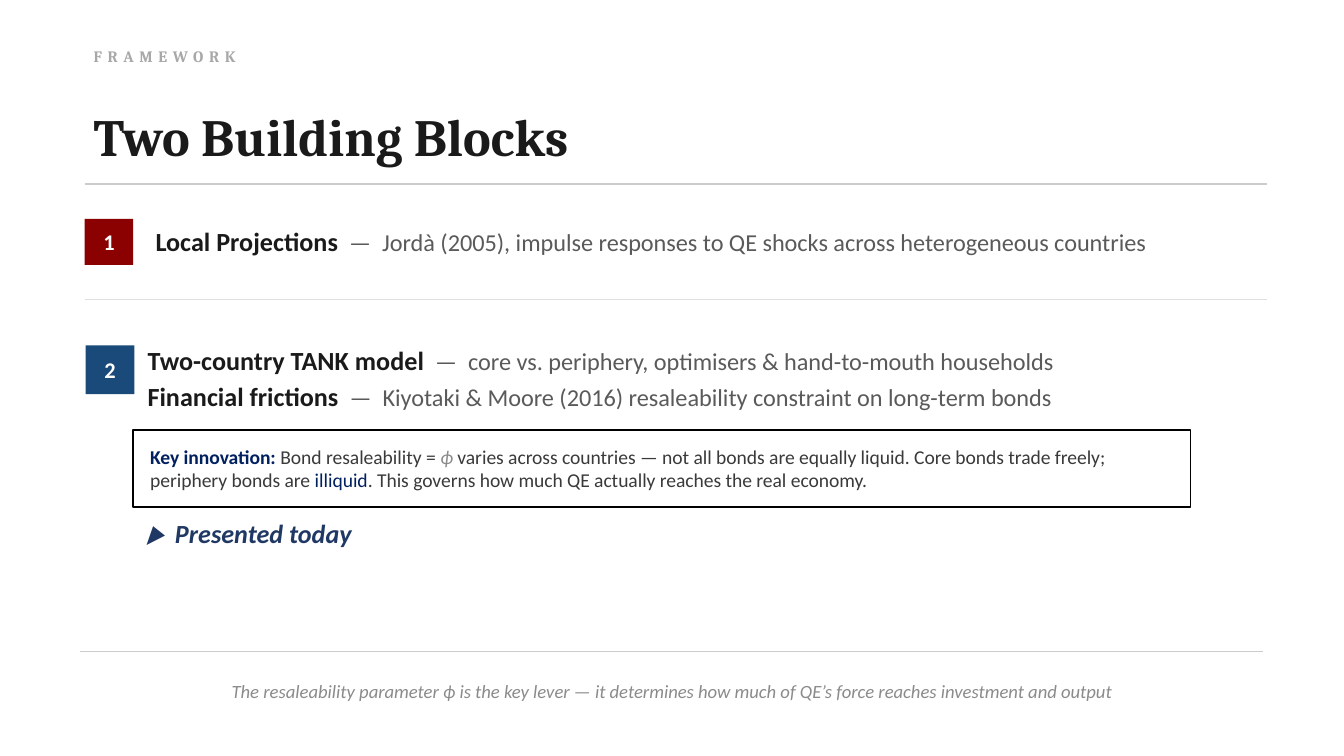
from lxml.etree import SubElement
from pptx import Presentation
from pptx.dml.color import RGBColor
from pptx.enum.shapes import MSO_CONNECTOR, MSO_SHAPE
from pptx.enum.text import MSO_ANCHOR, MSO_AUTO_SIZE, PP_ALIGN
from pptx.oxml.ns import qn
from pptx.util import Cm, Pt

INK, BODY, MUTED, DARK, NAVY = "1A1A1A", "5A5A5A", "8B8B8B", "3A3A3A", "002060"
ITEM_WIDTH, ITEM_HEIGHT = 21.18, 1.17

HEADINGS = [
    ((1.52, 0.71, 22.86, 0.71), [("FRAMEWORK", 8.5, "A8A8A8", "b")], 3),
    ((1.52, 1.65, 22.35, 1.83), [("Two Building Blocks", 28, INK, "b")], 0),
]
ITEMS = [
    ((2.69, 3.48, ITEM_WIDTH, 2.16), "Local Projections",
     "Jordà (2005), impulse responses to QE shocks across heterogeneous countries"),
    ((2.54, 6.22, ITEM_WIDTH, ITEM_HEIGHT), "Two-country TANK model",
     "core vs. periphery, optimisers & hand-to-mouth households"),
    ((2.54, 6.91, ITEM_WIDTH, ITEM_HEIGHT), "Financial frictions",
     "Kiyotaki & Moore (2016) resaleability constraint on long-term bonds"),
]
BADGES = [
    ((1.6, 4.14, 0.92, 0.87), "1", "8B0000"),
    ((1.62, 6.53, 0.92, 0.92), "2", "1A4A7A"),
]
RULES = [
    (1.6, 3.48, "CCCCCC", 0.75),
    (1.6, 5.66, "E0E0E0", 0.5),
    (1.52, 12.32, "CCCCCC", 0.75),
]
RULE_LENGTH = 22.35
INNOVATION_BOX = (2.51, 8.13, 19.99, 1.45)
INNOVATION = [
    ("Key innovation: ", 10.5, NAVY, "b"),
    ("Bond resaleability = ", 10.5, DARK, ""),
    ("ϕ", 10.5, MUTED, "i"),
    (" varies across countries — not all bonds are equally liquid. "
     "Core bonds trade freely; periphery bonds are ", 10.5, DARK, ""),
    ("illiquid", 10.5, NAVY, ""),
    (". This governs how much QE actually reaches the real economy.", 10.5, DARK, ""),
]
TODAY_BOX = (2.51, 9.65, 12.7, 0.86)
TODAY = [("▶  Presented today", 14, "203864", "bi")]
FOOTER_BOX = (1.52, 12.57, 22.35, 0.97)
FOOTER = [("The resaleability parameter ϕ is the key lever — it determines how much "
           "of QE’s force reaches investment and output", 10, MUTED, "i")]


def color(value):
    return RGBColor.from_string(value)


def write(shape, runs, font="Calibri", align=PP_ALIGN.LEFT, spacing=0):
    frame = shape.text_frame
    frame.word_wrap = True
    frame.vertical_anchor = MSO_ANCHOR.MIDDLE
    paragraph = frame.paragraphs[0]
    paragraph.alignment = align
    for text, size, ink, style in runs:
        run = paragraph.add_run()
        run.text = text
        run.font.name = font
        run.font.size = Pt(size)
        run.font.color.rgb = color(ink)
        run.font.bold = "b" in style
        run.font.italic = "i" in style
        if spacing:
            run._r.get_or_add_rPr().set("spc", str(spacing * 100))
    return frame


def add_text(slide, box, runs, **options):
    return write(slide.shapes.add_textbox(*map(Cm, box)), runs, **options)


def add_rectangle(slide, box, fill):
    shape = slide.shapes.add_shape(MSO_SHAPE.RECTANGLE, *map(Cm, box))
    shape.shadow.inherit = False
    shape.fill.solid()
    shape.fill.fore_color.rgb = color(fill)
    shape.line.fill.background()
    return shape


def add_rule(slide, left, top, ink, weight):
    rule = slide.shapes.add_connector(
        MSO_CONNECTOR.STRAIGHT, Cm(left), Cm(top), Cm(left + RULE_LENGTH), Cm(top))
    rule.line.color.rgb = color(ink)
    rule.line.width = Pt(weight)
    SubElement(rule._element.spPr, qn("a:effectLst"))


def main():
    presentation = Presentation()
    presentation.slide_width, presentation.slide_height = Cm(25.4), Cm(14.29)
    slide = presentation.slides.add_slide(presentation.slide_layouts[6])

    for box, runs, spacing in HEADINGS:
        add_text(slide, box, runs, font="Cambria", spacing=spacing)
    for rule in RULES:
        add_rule(slide, *rule)
    for box, number, fill in BADGES:
        badge = add_rectangle(slide, box, fill)
        write(badge, [(number, 12, "FFFFFF", "b")], align=PP_ALIGN.CENTER)
    for box, term, detail in ITEMS:
        add_text(slide, box, [(term, 14, INK, "b"), (f"  —  {detail}", 13, BODY, "")])

    innovation = add_rectangle(slide, INNOVATION_BOX, "FFFFFF")
    innovation.line.color.rgb = color("000000")
    innovation.line.width = Pt(1)
    frame = write(innovation, INNOVATION)
    frame.margin_left = frame.margin_right = Cm(0.33)
    frame.margin_top = frame.margin_bottom = Cm(0.18)

    today = add_text(slide, TODAY_BOX, TODAY)
    today.vertical_anchor = MSO_ANCHOR.TOP
    today.auto_size = MSO_AUTO_SIZE.SHAPE_TO_FIT_TEXT
    add_text(slide, FOOTER_BOX, FOOTER, align=PP_ALIGN.CENTER)

    presentation.save("out.pptx")


if __name__ == "__main__":
    main()
